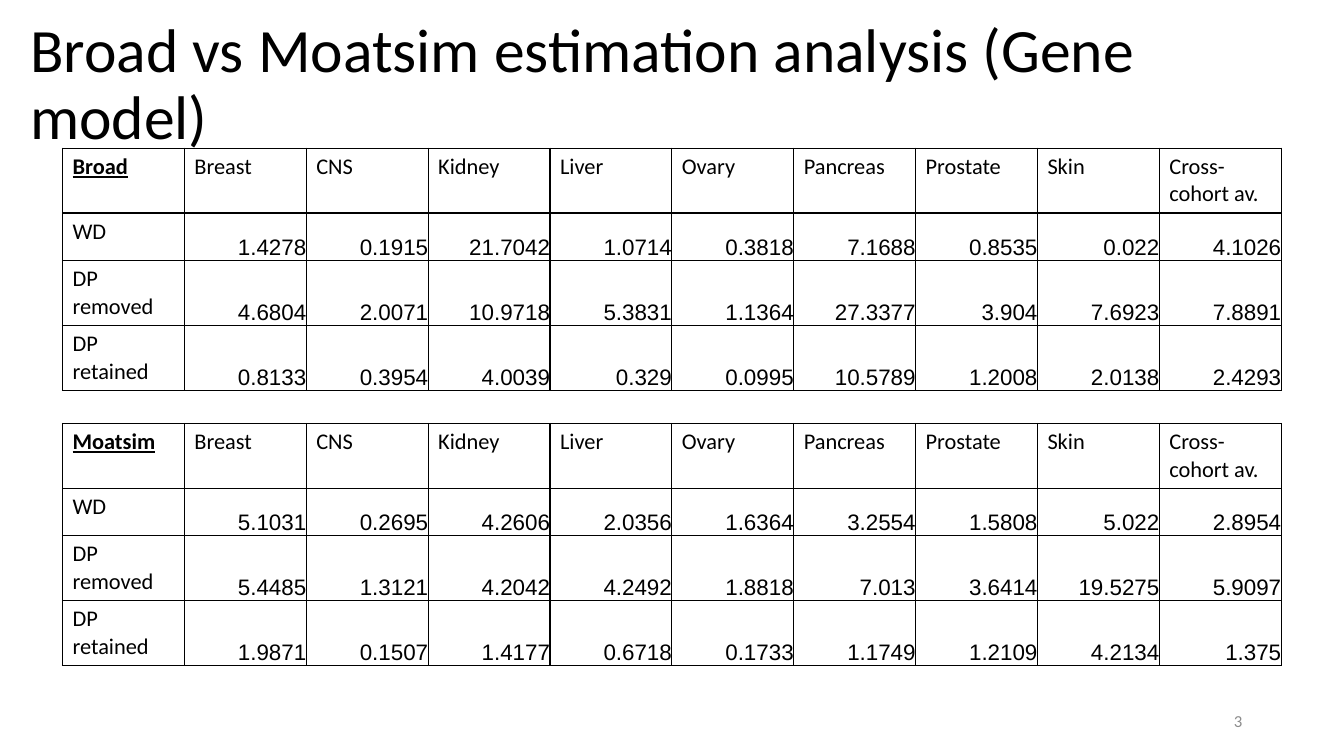
import pptx
import pptx.util
import pptx.dml.color
import pptx.enum.text
import pptx.oxml.ns
from lxml import etree

Inches = pptx.util.Inches
Pt = pptx.util.Pt
PP_ALIGN = pptx.enum.text.PP_ALIGN
MSO_ANCHOR = pptx.enum.text.MSO_ANCHOR
COLORS = {"text": "000000", "border": "000000", "page": "8C8C8C"}
COHORTS = ["Breast", "CNS", "Kidney", "Liver", "Ovary", "Pancreas",
           "Prostate", "Skin", "Cross-cohort av."]
METHODS = ["WD", "DP removed", "DP retained"]
ROW_HEIGHTS = [0.64, 0.47, 0.64, 0.64]
BROAD = [
    ["1.4278", "0.1915", "21.7042", "1.0714", "0.3818", "7.1688", "0.8535", "0.022", "4.1026"],
    ["4.6804", "2.0071", "10.9718", "5.3831", "1.1364", "27.3377", "3.904", "7.6923", "7.8891"],
    ["0.8133", "0.3954", "4.0039", "0.329", "0.0995", "10.5789", "1.2008", "2.0138", "2.4293"],
]
MOATSIM = [
    ["5.1031", "0.2695", "4.2606", "2.0356", "1.6364", "3.2554", "1.5808", "5.022", "2.8954"],
    ["5.4485", "1.3121", "4.2042", "4.2492", "1.8818", "7.013", "3.6414", "19.5275", "5.9097"],
    ["1.9871", "0.1507", "1.4177", "0.6718", "0.1733", "1.1749", "1.2109", "4.2134", "1.375"],
]


def format_paragraph(paragraph, size, color, font="Calibri", align=PP_ALIGN.LEFT):
    paragraph.alignment = align
    paragraph.font.size = Pt(size)
    paragraph.font.name = font
    paragraph.font.color.rgb = pptx.dml.color.RGBColor.from_string(COLORS[color])


def add_borders(cell):
    qn = pptx.oxml.ns.qn
    properties = cell._tc.get_or_add_tcPr()
    for side in ("lnL", "lnR", "lnT", "lnB"):
        line = etree.SubElement(properties, qn(f"a:{side}"), w=str(Pt(1)))
        fill = etree.SubElement(line, qn("a:solidFill"))
        etree.SubElement(fill, qn("a:srgbClr"), val=COLORS["border"])


def add_title(slide, left, top, width, height):
    title = slide.shapes.title
    title.left, title.top = Inches(left), Inches(top)
    title.width, title.height = Inches(width), Inches(height)
    frame = title.text_frame
    frame.text = "Broad vs Moatsim estimation analysis (Gene model)"
    frame.word_wrap = True
    frame.auto_size = pptx.enum.text.MSO_AUTO_SIZE.NONE
    frame.vertical_anchor = MSO_ANCHOR.MIDDLE
    paragraph = frame.paragraphs[0]
    paragraph.line_spacing = 0.9
    format_paragraph(paragraph, 44, "text")


def add_estimates(slide, name, values, left, top, width):
    rows = [[name] + COHORTS]
    rows += [[method] + row for method, row in zip(METHODS, values)]
    table = slide.shapes.add_table(
        len(rows), len(rows[0]), Inches(left), Inches(top),
        Inches(width), Inches(sum(ROW_HEIGHTS))).table
    table.first_row = False
    table.horz_banding = False
    for column in table.columns:
        column.width = Inches(width / len(rows[0]))
    for row_index, row in enumerate(rows):
        table.rows[row_index].height = Inches(ROW_HEIGHTS[row_index])
        for column_index, text in enumerate(row):
            cell = table.cell(row_index, column_index)
            cell.text = text
            paragraph = cell.text_frame.paragraphs[0]
            if row_index and column_index:
                cell.margin_left = cell.margin_right = 0
                cell.margin_top = cell.margin_bottom = 0
                cell.vertical_anchor = MSO_ANCHOR.BOTTOM
                format_paragraph(paragraph, 16, "text", "Arial", PP_ALIGN.RIGHT)
            else:
                format_paragraph(paragraph, 16, "text")
            add_borders(cell)
            cell.fill.background()
    heading = table.cell(0, 0).text_frame.paragraphs[0]
    heading.font.bold = True
    heading.font.underline = True


def add_page_number(slide, left, top, width, height):
    frame = slide.shapes.add_textbox(
        Inches(left), Inches(top), Inches(width), Inches(height)).text_frame
    frame.text = "3"
    frame.word_wrap = True
    frame.vertical_anchor = MSO_ANCHOR.MIDDLE
    format_paragraph(frame.paragraphs[0], 12, "page", align=PP_ALIGN.RIGHT)


def main():
    presentation = pptx.Presentation()
    presentation.slide_width = Inches(13.33)
    presentation.slide_height = Inches(7.5)
    slide = presentation.slides.add_slide(presentation.slide_layouts[5])
    add_title(slide, 0.2, 0.13, 12.96, 1.45)
    add_estimates(slide, "Broad", BROAD, 0.62, 1.47, 12.09)
    add_estimates(slide, "Moatsim", MOATSIM, 0.62, 4.2, 12.09)
    add_page_number(slide, 9.42, 6.95, 3, 0.4)
    presentation.save("out.pptx")


if __name__ == "__main__":
    main()
